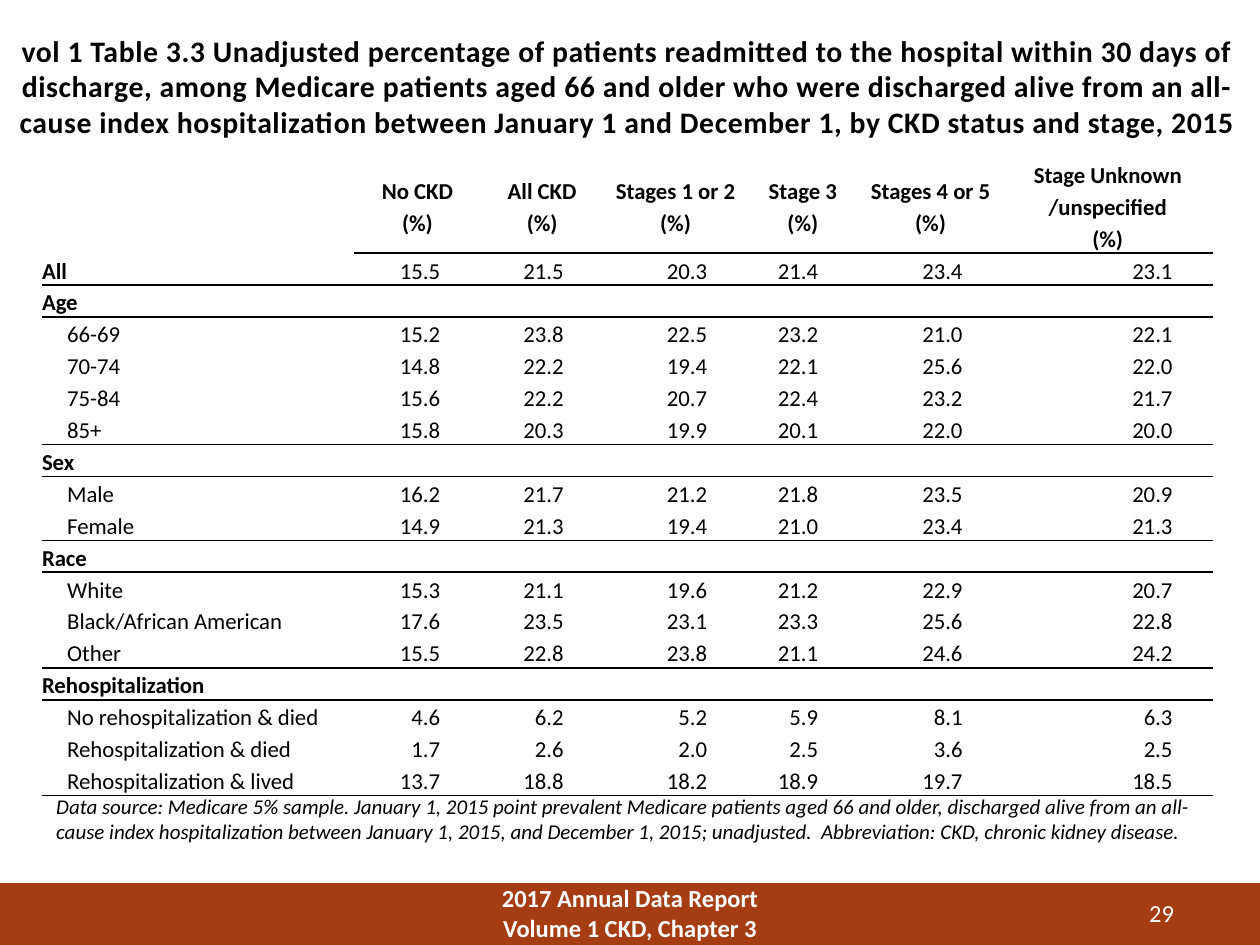
from lxml.etree import SubElement
from pptx import Presentation
from pptx.dml.color import RGBColor
from pptx.enum.shapes import MSO_SHAPE
from pptx.enum.text import MSO_ANCHOR as ANCHOR, PP_ALIGN as ALIGN
from pptx.oxml import parse_xml
from pptx.oxml.ns import nsdecls, qn
from pptx.util import Pt

FONT, BLACK, WHITE, RUST = "Calibri", "000000", "FFFFFF", "A63C12"
PLAIN_TABLE = "{2D5ABB26-0587-4C30-8999-92F81FD0307C}"
LINE = 18.24  # one table line: 13 pt at 1.15 spacing
COL_WIDTHS = [178.5, 72, 70.5, 82, 63.5, 82.5, 120]
HEADERS = ["No CKD", "All CKD", "Stages 1 or 2", "Stage 3", "Stages 4 or 5",
           "Stage Unknown /unspecified"]
TITLE = ("vol 1 Table 3.3 Unadjusted percentage of patients readmitted to the hospital "
         "within 30 days of discharge, among Medicare patients aged 66 and older who were "
         "discharged alive from an all-cause index hospitalization between January 1 and "
         "December 1, by CKD status and stage, 2015")
SOURCE = ("Data source: Medicare 5% sample. January 1, 2015 point prevalent Medicare patients "
          "aged 66 and older, discharged alive from an all-cause index hospitalization between "
          "January 1, 2015, and December 1, 2015; unadjusted.  Abbreviation: CKD, chronic "
          "kidney disease.")
# Each group: heading, values beside the heading, indented rows
GROUPS = [
    ("All", "15.5 21.5 20.3 21.4 23.4 23.1", []),
    ("Age", "", [
        ("66-69", "15.2 23.8 22.5 23.2 21.0 22.1"),
        ("70-74", "14.8 22.2 19.4 22.1 25.6 22.0"),
        ("75-84", "15.6 22.2 20.7 22.4 23.2 21.7"),
        ("85+", "15.8 20.3 19.9 20.1 22.0 20.0")]),
    ("Sex", "", [
        ("Male", "16.2 21.7 21.2 21.8 23.5 20.9"),
        ("Female", "14.9 21.3 19.4 21.0 23.4 21.3")]),
    ("Race", "", [
        ("White", "15.3 21.1 19.6 21.2 22.9 20.7"),
        ("Black/African American", "17.6 23.5 23.1 23.3 25.6 22.8"),
        ("Other", "15.5 22.8 23.8 21.1 24.6 24.2")]),
    ("Rehospitalization", "", [
        ("No rehospitalization & died", "4.6 6.2 5.2 5.9 8.1 6.3"),
        ("Rehospitalization & died", "1.7 2.6 2.0 2.5 3.6 2.5"),
        ("Rehospitalization & lived", "13.7 18.8 18.2 18.9 19.7 18.5")]),
]


def rgb(color):
    return RGBColor.from_string(color)


def write(tf, lines, size, color=BLACK, align=ALIGN.LEFT, bold=False, italic=False,
          spacing=None):
    for i, line in enumerate(lines):
        p = tf.paragraphs[0] if i == 0 else tf.add_paragraph()
        p.text = line
        p.alignment, p.line_spacing = align, spacing
        f = p.font
        f.name, f.size, f.bold, f.italic = FONT, Pt(size), bold, italic
        f.color.rgb = rgb(color)


def add_text(slide, box, lines, size, **style):
    tf = slide.shapes.add_textbox(*map(Pt, box)).text_frame
    tf.word_wrap = True
    write(tf, lines, size, **style)
    return tf


def add_title(slide, box):
    tf = add_text(slide, box, [TITLE], 17, align=ALIGN.CENTER, bold=True)
    tf.paragraphs[0].runs[0]._r.get_or_add_rPr().set("spc", "30")


def fill_cell(cell, lines, align, bold=False, left=0, right=0, indent=0):
    cell.margin_left, cell.margin_right = Pt(left), Pt(right)
    cell.margin_top = cell.margin_bottom = 0
    cell.vertical_anchor = ANCHOR.MIDDLE
    cell.fill.background()
    if any(lines):
        write(cell.text_frame, lines, 13, align=align, bold=bold, spacing=1.15)
        if indent:
            cell.text_frame.paragraphs[0]._p.get_or_add_pPr().set("marL", str(Pt(indent)))
    else:
        # Keeps an empty cell from stretching its row
        SubElement(cell.text_frame.paragraphs[0]._p, qn("a:endParaRPr"), sz="1300")


def add_border(cell, side):
    ln = parse_xml(f'<a:ln{side} {nsdecls("a")} w="{Pt(1)}"><a:solidFill>'
                   f'<a:srgbClr val="{BLACK}"/></a:solidFill></a:ln{side}>')
    cell._tc.get_or_add_tcPr().insert(0, ln)


def rule_below(table, row, first_col=0):
    for col in range(first_col, len(table.columns)):
        add_border(table.cell(row, col), "B")
        if row + 1 < len(table.rows):
            add_border(table.cell(row + 1, col), "T")


def add_readmission_table(slide, left, top):
    n_rows = 1 + sum(1 + len(rows) for _, _, rows in GROUPS)
    header_height = 3 * LINE
    table = slide.shapes.add_table(
        n_rows, len(COL_WIDTHS), Pt(left), Pt(top), Pt(sum(COL_WIDTHS)),
        Pt(header_height + (n_rows - 1) * LINE)).table
    table.first_row = table.horz_banding = False
    table._tbl.tblPr.find(qn("a:tableStyleId")).text = PLAIN_TABLE
    for col, width in zip(table.columns, COL_WIDTHS):
        col.width = Pt(width)
    for i, row in enumerate(table.rows):
        row.height = Pt(LINE if i else header_height)

    fill_cell(table.cell(0, 0), [""], ALIGN.LEFT)
    for col, header in enumerate(HEADERS, 1):
        fill_cell(table.cell(0, col), [header, "(%)"], ALIGN.CENTER, bold=True)
    rule_below(table, 0, first_col=1)

    row = 0
    for heading, totals, members in GROUPS:
        for i, (label, values) in enumerate([(heading, totals), *members]):
            row += 1
            fill_cell(table.cell(row, 0), [label], ALIGN.LEFT, bold=i == 0,
                      indent=14.4 if i else 0)
            for col, value in enumerate(values.split() or [""] * len(HEADERS), 1):
                fill_cell(table.cell(row, col), [value], ALIGN.RIGHT, left=5.76, right=23)
        rule_below(table, row)


def add_footer(slide, left, top, width, height):
    bar = slide.shapes.add_shape(MSO_SHAPE.RECTANGLE, *map(Pt, (left, top, width, height)))
    bar.shadow.inherit = False
    bar.fill.solid()
    bar.fill.fore_color.rgb = rgb(RUST)
    bar.line.fill.background()
    add_text(slide, (left + 258, top - 3.6, 204, 24),
             ["2017 Annual Data Report", "Volume 1 CKD, Chapter 3"], 14,
             color=WHITE, align=ALIGN.CENTER, bold=True)
    add_text(slide, (left + 606, top + 5, 72, 21.6), ["29"], 14,
             color=WHITE, align=ALIGN.RIGHT)


def main():
    prs = Presentation()
    prs.slide_width, prs.slide_height = Pt(720), Pt(540)
    slide = prs.slides.add_slide(prs.slide_layouts[6])
    add_footer(slide, 0, 504.7, 720, 36)
    add_title(slide, (-3, 15, 723, 101))
    add_readmission_table(slide, 24, 90)
    add_text(slide, (25, 450, 666, 36), [SOURCE], 12, italic=True)
    prs.save("out.pptx")


if __name__ == "__main__":
    main()
